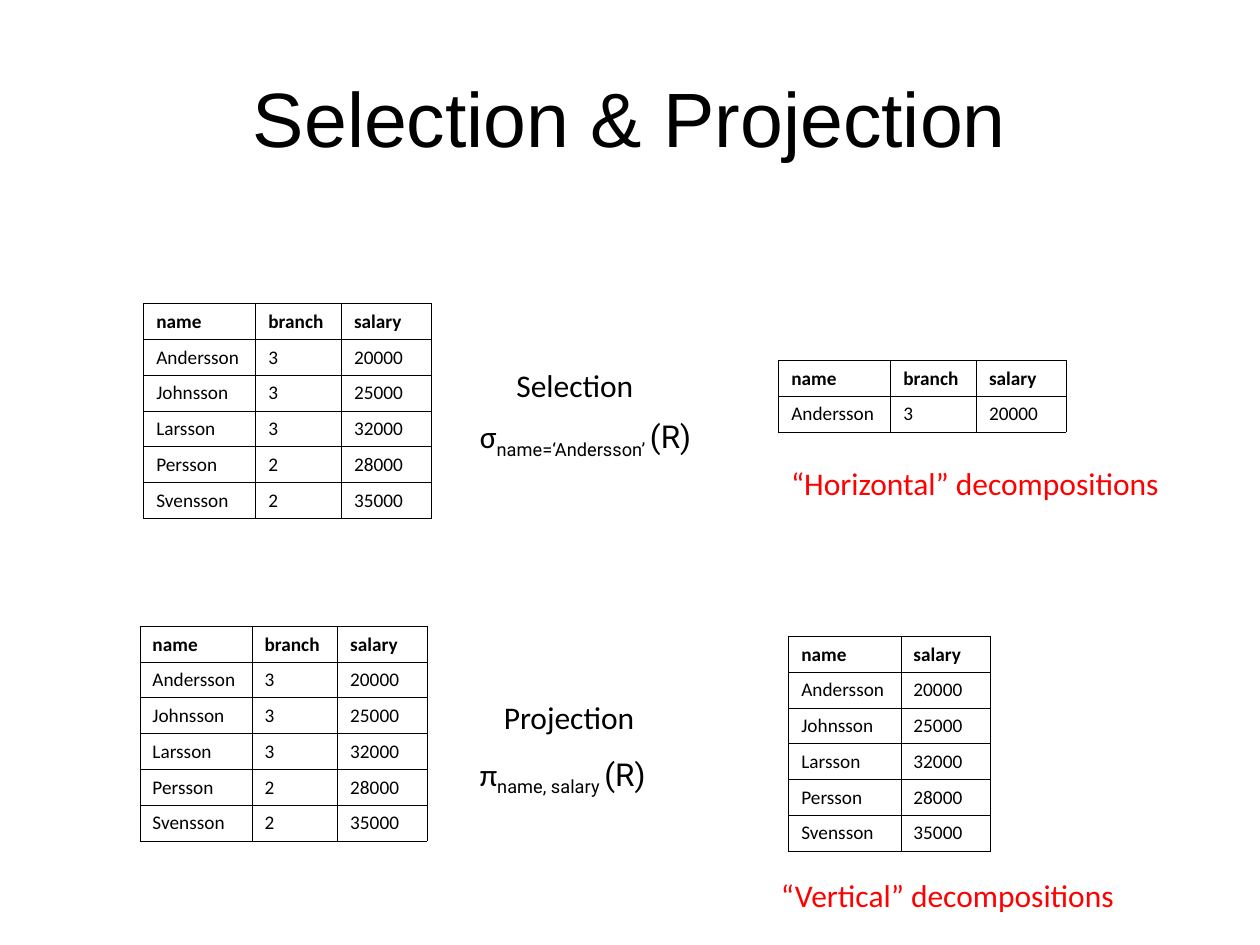
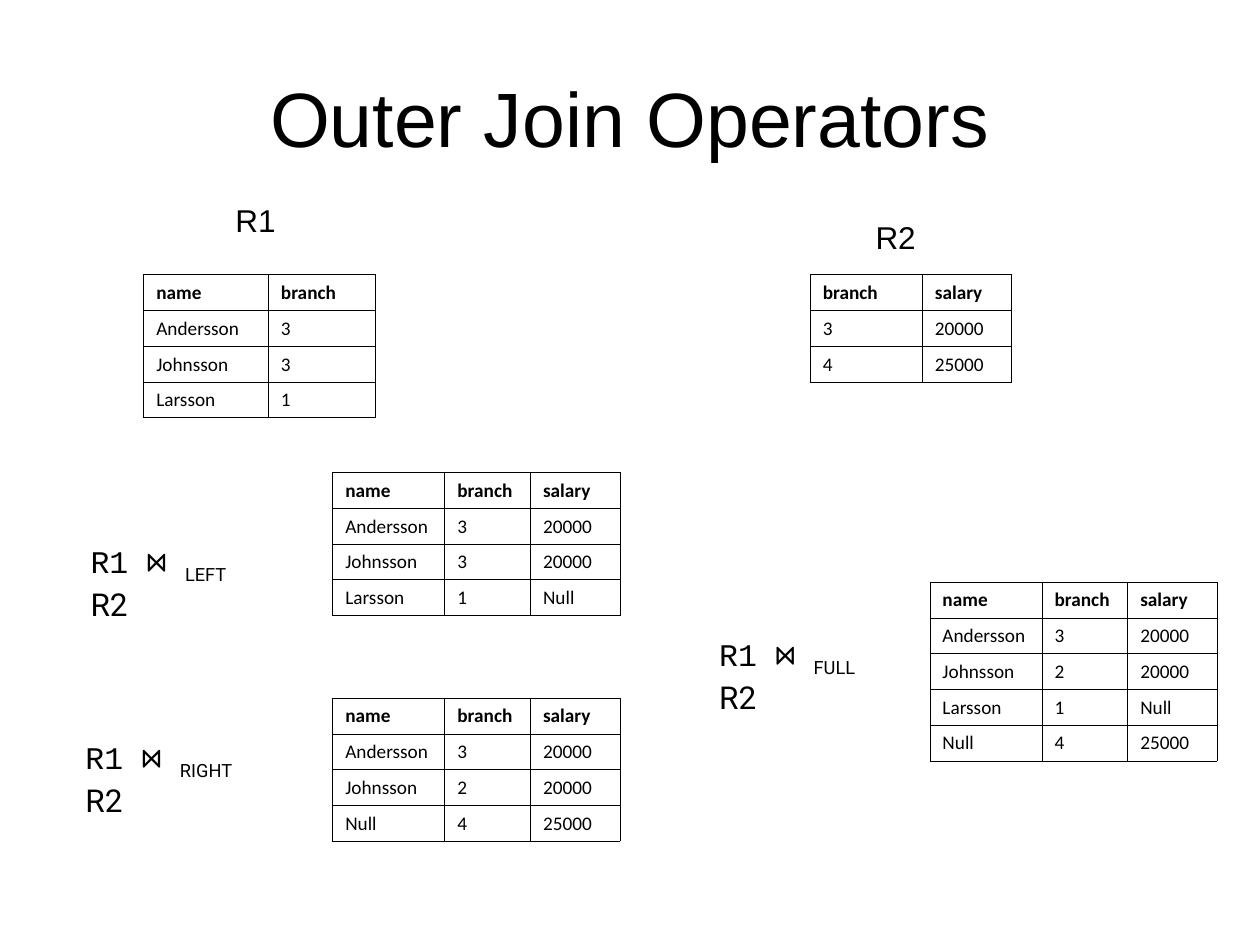
from lxml import etree
from pptx import Presentation
from pptx.dml.color import RGBColor
from pptx.enum import text
from pptx.oxml import ns
from pptx.util import Pt

PX = 9144
BLACK = RGBColor(0, 0, 0)
WHITE = RGBColor(255, 255, 255)
RED = RGBColor(255, 0, 0)
SANS, BODY, MONO, SUB = "Arial", "Calibri", "Courier New", "Roboto"
WIDE = (89, 68, 71)
PAIR = (89, 71)
ROW = 28
HEAD = ("name", "branch", "salary")
STAFF = [
    HEAD,
    ("Andersson", "3", "20000"),
    ("Johnsson", "3", "25000"),
    ("Larsson", "3", "32000"),
    ("Persson", "2", "28000"),
    ("Svensson", "2", "35000"),
]


def scale(*sizes):
    return [size * PX for size in sizes]


def style(run, face, size, color=BLACK, bold=False):
    font = run.font
    font.name, font.size, font.bold = face, Pt(size), bold
    font.color.rgb = color


def add_box(slide, box, wrap):
    frame = slide.shapes.add_textbox(*scale(*box)).text_frame
    frame.word_wrap = wrap
    return frame


def add_title(slide, words):
    frame = add_box(slide, (50, 30, 900, 125), True)
    frame.vertical_anchor = text.MSO_ANCHOR.MIDDLE
    frame.text = words
    line = frame.paragraphs[0]
    line.alignment = text.PP_ALIGN.CENTER
    style(line.runs[0], SANS, 44)


def add_label(slide, box, words, face=BODY, color=BLACK):
    frame = add_box(slide, box, False)
    frame.auto_size = text.MSO_AUTO_SIZE.SHAPE_TO_FIT_TEXT
    frame.text = words
    style(frame.paragraphs[0].runs[0], face, 18, color)


def add_term(slide, box, face, sign, sub, rest):
    frame = add_box(slide, box, True)
    frame.auto_size = text.MSO_AUTO_SIZE.SHAPE_TO_FIT_TEXT
    line = frame.paragraphs[0]
    line.level = 1
    props = line._p.get_or_add_pPr()
    props.set("marL", str(50 * PX))
    props.set("indent", "0")
    for words, kind in ((sign, face), (sub, SUB), (rest, SUB)):
        run = line.add_run()
        run.text = words
        style(run, kind, 18)
        if words == sub:
            run._r.get_or_add_rPr().set("baseline", "-25000")


def add_edges(cell):
    props = cell._tc.get_or_add_tcPr()
    for side in ("lnL", "lnR", "lnT", "lnB"):
        edge = etree.SubElement(props, ns.qn("a:" + side), w=str(Pt(0.4)))
        fill = etree.SubElement(edge, ns.qn("a:solidFill"))
        etree.SubElement(fill, ns.qn("a:srgbClr"), val=str(BLACK))


def add_grid(slide, left, top, rows, widths=WIDE):
    box = scale(left, top, sum(widths), ROW * len(rows))
    table = slide.shapes.add_table(len(rows), len(widths), *box).table
    table.first_row = table.horz_banding = False
    for column, width in zip(table.columns, widths):
        column.width = width * PX
    for y, row in enumerate(rows):
        table.rows[y].height = ROW * PX
        for x, words in enumerate(row):
            cell = table.cell(y, x)
            add_edges(cell)
            cell.fill.solid()
            cell.fill.fore_color.rgb = WHITE
            cell.vertical_anchor = text.MSO_ANCHOR.MIDDLE
            cell.text = words
            style(cell.text_frame.paragraphs[0].runs[0], BODY, 11, bold=y == 0)


def add_split(slide):
    add_title(slide, "Selection & Projection")
    add_grid(slide, 114, 241, STAFF)
    add_grid(slide, 111, 497, STAFF)
    add_label(slide, (400, 286, 114, 40), "Selection")
    add_label(slide, (390, 549, 124, 40), "Projection")
    add_grid(slide, 618, 286, STAFF[:2])
    add_grid(slide, 626, 505, [(name, pay) for name, _, pay in STAFF], PAIR)
    add_term(slide, (321, 326, 262, 40), BODY, "σ", "name=‘Andersson’ ", "(R)")
    add_term(slide, (321, 594, 207, 40), BODY, "π", "name, salary ", "(R)")
    add_label(slide, (618, 363, 315, 40), "“Horizontal” decompositions", color=RED)
    add_label(slide, (610, 690, 286, 40), "“Vertical” decompositions", color=RED)


def add_joins(slide):
    add_title(slide, "Outer Join Operators")
    first = [HEAD[:2], ("Andersson", "3"), ("Johnsson", "3"), ("Larsson", "1")]
    other = [HEAD[1:], ("3", "20000"), ("4", "25000")]
    add_grid(slide, 114, 218, first, (99, 85))
    add_grid(slide, 643, 218, other, PAIR)
    add_label(slide, (177, 155, 52, 40), "R1", SANS)
    add_label(slide, (685, 168, 52, 40), "R2", SANS)

    anders = ("Andersson", "3", "20000")
    johns = ("Johnsson", "2", "20000")
    lars = ("Larsson", "1", "Null")
    null = ("Null", "4", "25000")
    joins = [
        ("LEFT", (12, 425, 209, 40), 264, 375,
         [anders, ("Johnsson", "3", "20000"), lars]),
        ("RIGHT", (8, 581, 220, 40), 264, 554, [anders, johns, null]),
        ("FULL", (511, 499, 210, 40), 738, 462, [anders, johns, lars, null]),
    ]
    for kind, box, left, top, rows in joins:
        add_term(slide, box, MONO, "R1 ⋈ ", kind, " R2")
        add_grid(slide, left, top, [HEAD] + rows)


def main():
    deck = Presentation()
    deck.slide_width, deck.slide_height = scale(1000, 750)
    for build in (add_split, add_joins):
        build(deck.slides.add_slide(deck.slide_layouts[6]))
    deck.save("out.pptx")


if __name__ == "__main__":
    main()
